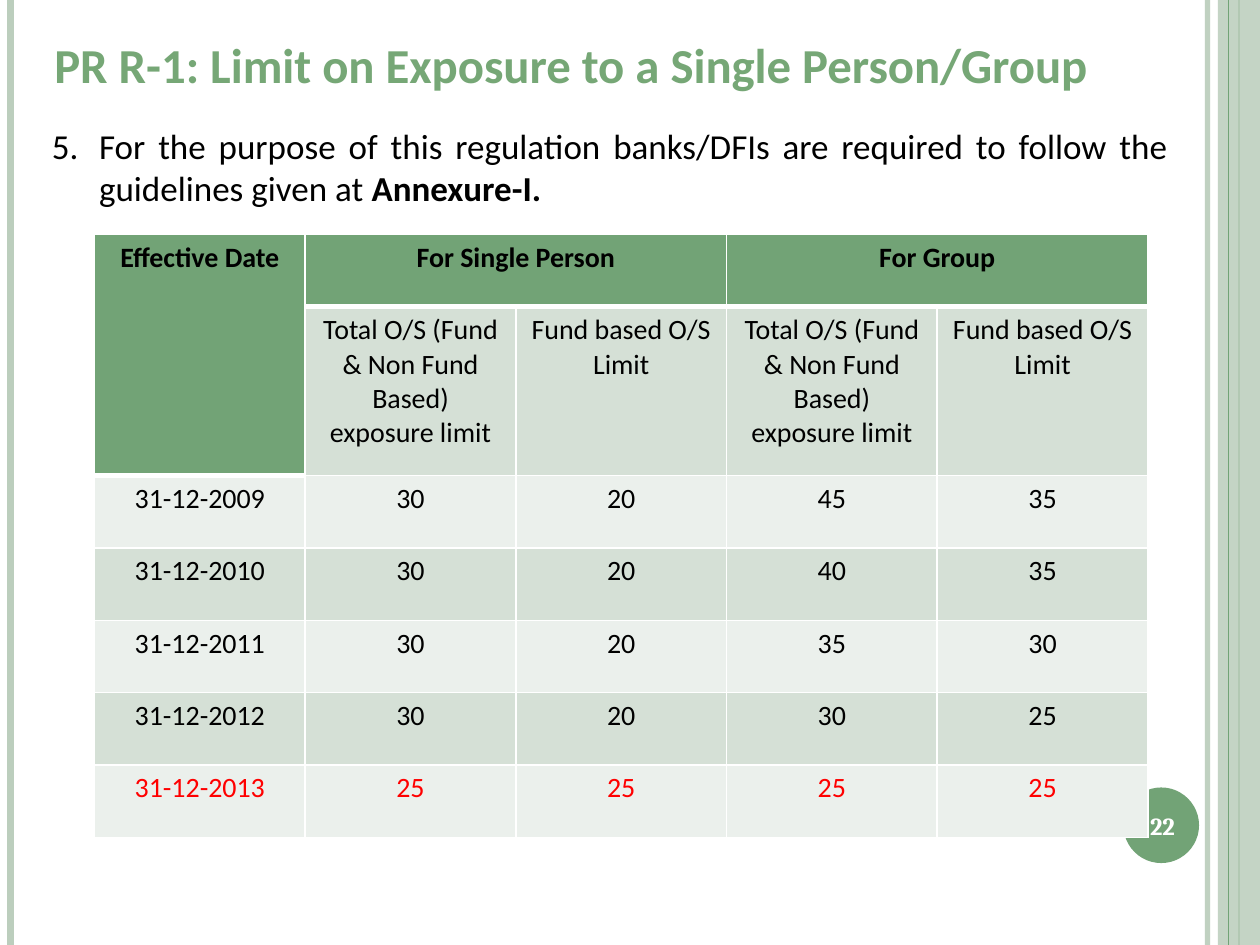
from typing import NamedTuple

from lxml.etree import SubElement as Sub
from pptx import Presentation
from pptx.dml.color import RGBColor as Rgb
from pptx.enum.shapes import MSO_CONNECTOR as Link, MSO_SHAPE as Form
from pptx.enum.text import MSO_ANCHOR as Anchor, PP_ALIGN as Align
from pptx.oxml.ns import qn
from pptx.util import Pt

HUES = {
    "green": "72A376", "title": "76A776", "pale": "BCCEBD", "band": "D5E0D6",
    "light": "EBF0EC", "white": "FFFFFF", "black": "000000", "red": "FF0000",
}


class Rule(NamedTuple):
    x: float
    hue: str
    width: float
    alpha: int = 100


class Box(NamedTuple):
    x: float
    y: float
    w: float
    h: float


class Run(NamedTuple):
    text: str
    size: float
    hue: str = "black"
    bold: bool = False
    face: str = "Calibri"


RULES = [
    Rule(690, "pale", 3, 93), Rule(6, "pale", 4.5),
    Rule(708, "green", 1.5), Rule(702, "green", 0.75),
]
BAND = Box(696, 0, 24, 540)
BADGE = Box(642, 450, 43.2, 43.2)
TITLE = Box(24, 16.5, 634, 40)
NUMBER = Box(640, 451.5, 48.5, 41)
BODY = Box(22.5, 67.5, 652, 55.5)
GRID = Box(54, 134, 602, 344.5)
TOTAL = "Total O/S (Fund & Non Fund Based) exposure limit"
FUND = "Fund based O/S Limit"
ROWS = [
    ["Effective Date", "For Single Person", "", "For Group", ""],
    ["", TOTAL, FUND, TOTAL, FUND],
    ["31-12-2009", "30", "20", "45", "35"],
    ["31-12-2010", "30", "20", "40", "35"],
    ["31-12-2011", "30", "20", "35", "30"],
    ["31-12-2012", "30", "20", "30", "25"],
    ["31-12-2013", "25", "25", "25", "25"],
]


def tint(node, hue: str, alpha: int = 100) -> None:
    """Fill an object with a colour, see-through if alpha is below 100."""
    node.fill.solid()
    node.fill.fore_color.rgb = Rgb.from_string(HUES[hue])
    if alpha < 100:
        fade(node.fill, alpha)


def fade(fill, alpha: int) -> None:
    """Give a solid fill its opacity in percent."""
    color = fill._xPr.find(qn("a:solidFill"))[0]
    Sub(color, qn("a:alpha"), val=str(alpha * 1000))


def rule(slide, item: Rule) -> None:
    """Draw one full-height vertical line."""
    x = Pt(item.x)
    line = slide.shapes.add_connector(Link.STRAIGHT, x, 0, x, Pt(540))
    line.line.width = Pt(item.width)
    tint(line.line, item.hue, item.alpha)
    Sub(line._element.spPr, qn("a:effectLst"))


def shape(slide, form: Form, box: Box, hue: str, alpha: int = 100) -> None:
    """Draw a plain filled shape."""
    item = slide.shapes.add_shape(form, *map(Pt, box))
    item.shadow.inherit = False
    item.line.fill.background()
    tint(item, hue, alpha)


def write(para, runs: list[Run], align: Align) -> None:
    """Write formatted runs into a paragraph."""
    para.alignment = align
    for run in runs:
        part = para.add_run()
        part.text = run.text
        style = {"size": Pt(run.size), "bold": run.bold, "name": run.face}
        for key, value in style.items():
            setattr(part.font, key, value)
        part.font.color.rgb = Rgb.from_string(HUES[run.hue])


def label(slide, box: Box, runs: list[Run], align: Align, anchor: Anchor):
    """Add a wrapped text box and return its paragraph."""
    frame = slide.shapes.add_textbox(*map(Pt, box)).text_frame
    for key, value in {"word_wrap": True, "vertical_anchor": anchor}.items():
        setattr(frame, key, value)
    write(frame.paragraphs[0], runs, align)
    return frame.paragraphs[0]


def count(para, start: int, indent: float) -> None:
    """Number a paragraph with a hanging indent."""
    props = para._p.get_or_add_pPr()
    for key, sign in {"marL": 1, "indent": -1}.items():
        props.set(key, str(sign * Pt(indent)))
    Sub(props, qn("a:buFont"), typeface="+mj-lt")
    Sub(props, qn("a:buAutoNum"), type="arabicPeriod", startAt=str(start))


def head(row: int, col: int) -> bool:
    """Tell whether a cell belongs to the table heading."""
    return row == 0 or (row == 1 and col == 0)


def edge(cell, row: int, col: int) -> None:
    """Give a cell white borders, thick beneath the heading."""
    top = 3 if row and head(row - 1, col) else 1
    base = 3 if head(row, col) else 1
    props = cell._tc.get_or_add_tcPr()
    for side, width in {"L": 1, "R": 1, "T": top, "B": base}.items():
        line = Sub(props, qn(f"a:ln{side}"), w=str(Pt(width)))
        fill = Sub(line, qn("a:solidFill"))
        Sub(fill, qn("a:srgbClr"), val=HUES["white"])


def grid(slide, box: Box) -> None:
    """Build the table of exposure limits."""
    size = len(ROWS), len(ROWS[0])
    table = slide.shapes.add_table(*size, *map(Pt, box)).table
    for col in table.columns:
        col.width = Pt(box.w / size[1])
    for num, row in enumerate(table.rows):
        row.height = Pt(96.5 if num == 1 else 41.33)
    for r, texts in enumerate(ROWS):
        hue = "red" if r == size[0] - 1 else "black"
        for c, text in enumerate(texts):
            cell = table.cell(r, c)
            edge(cell, r, c)
            tint(cell, "green" if head(r, c) else "band" if r % 2 else "light")
            if text:
                run = Run(text, 16, hue, head(r, c))
                write(cell.text_frame.paragraphs[0], [run], Align.CENTER)
    for first, last in [((0, 0), (1, 0)), ((0, 1), (0, 2)), ((0, 3), (0, 4))]:
        table.cell(*first).merge(table.cell(*last))


def main() -> None:
    """Build the slide and save it."""
    deck = Presentation()
    deck.slide_width, deck.slide_height = Pt(720), Pt(540)
    slide = deck.slides.add_slide(deck.slide_layouts[6])
    for item in RULES[:3]:
        rule(slide, item)
    shape(slide, Form.RECTANGLE, BAND, "pale", 87)
    rule(slide, RULES[3])
    shape(slide, Form.OVAL, BADGE, "green")
    name = Run("PR R-1: Limit on Exposure to a Single Person/Group", 27.9, "title", True)
    label(slide, TITLE, [name], Align.LEFT, Anchor.MIDDLE)
    page = Run("22", 14, "white", True, "Cambria")
    label(slide, NUMBER, [page], Align.CENTER, Anchor.MIDDLE)
    lead = Run(
        "For the purpose of this regulation banks/DFIs are required "
        "to follow the guidelines given at ", 20)
    runs = [lead, Run("Annexure-I.", 20, bold=True)]
    count(label(slide, BODY, runs, Align.JUSTIFY, Anchor.TOP), 5, 27)
    grid(slide, GRID)
    deck.save("out.pptx")


if __name__ == "__main__":
    main()
